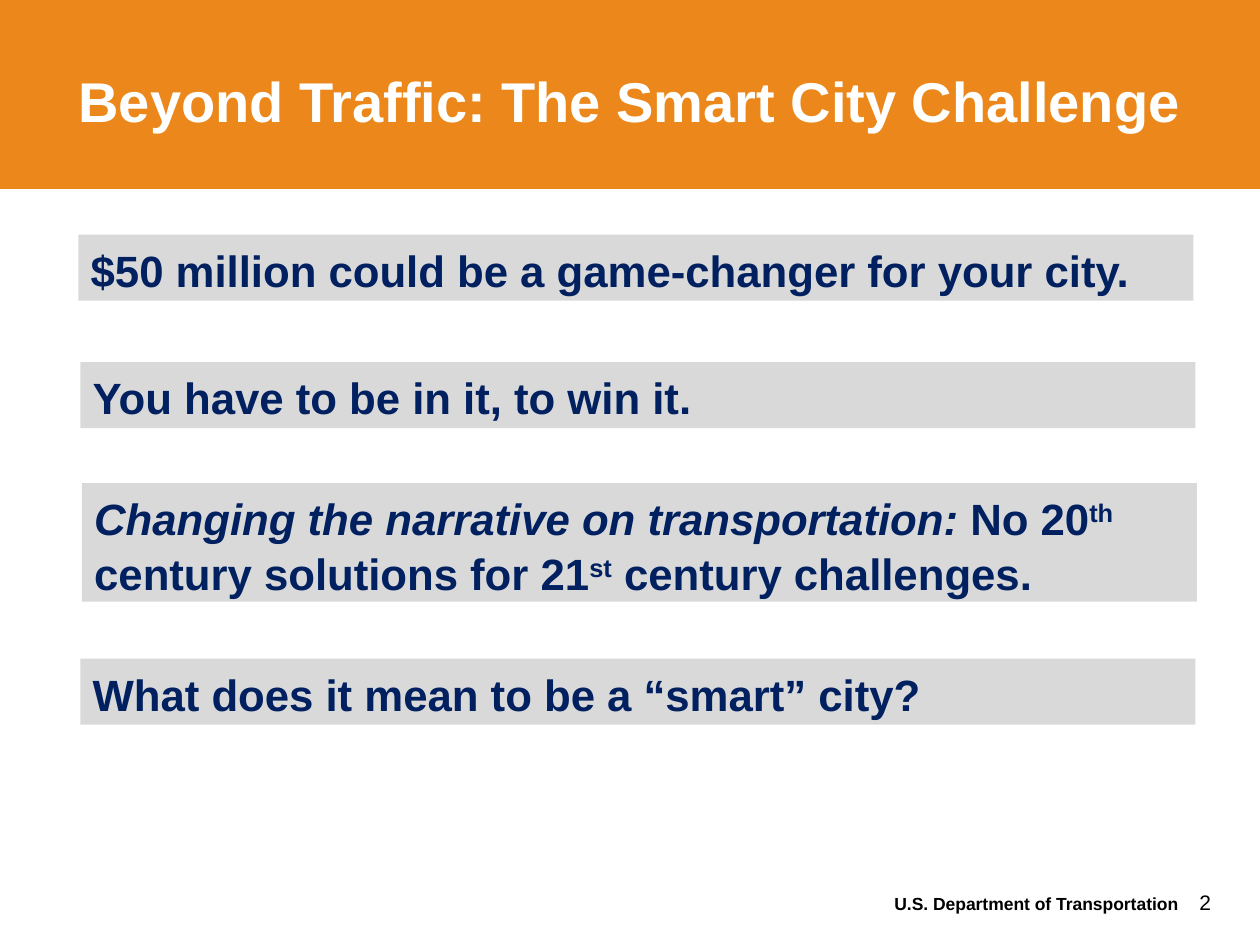
from dataclasses import dataclass

from pptx import Presentation
from pptx.dml.color import RGBColor
from pptx.enum.shapes import MSO_SHAPE
from pptx.enum.text import MSO_ANCHOR, MSO_AUTO_SIZE, PP_ALIGN
from pptx.slide import Slide
from pptx.util import Cm, Pt

RECTANGLE = MSO_SHAPE.RECTANGLE
TOP, MIDDLE = MSO_ANCHOR.TOP, MSO_ANCHOR.MIDDLE
LEFT, CENTER = PP_ALIGN.LEFT, PP_ALIGN.CENTER
NO_AUTOFIT = MSO_AUTO_SIZE.NONE
TITLE_ONLY = 5
SUPERSCRIPT = "30000"
COLORS = {
    "orange": "EC881B",
    "gray": "D9D9D9",
    "navy": "002060",
    "white": "FFFFFF",
    "black": "000000",
}


@dataclass
class SlideBuilder:
    """Draws the title band, statement bars and footer in one style."""

    slide: Slide
    font_name: str = "Arial"

    def color(self, name):
        return RGBColor.from_string(COLORS[name])

    def fill(self, shape, color):
        shape.fill.solid()
        shape.fill.fore_color.rgb = self.color(color)

    def format(self, paragraph, size, color, bold, alignment=LEFT):
        paragraph.alignment = alignment
        font = paragraph.font
        font.name, font.size, font.bold = self.font_name, Pt(size), bold
        font.color.rgb = self.color(color)

    def title(self, text, width, height):
        shape = self.slide.shapes.title
        shape.left, shape.top, shape.width, shape.height = 0, 0, Cm(width), Cm(height)
        self.fill(shape, "orange")
        frame = shape.text_frame
        frame.text = text
        frame.auto_size = NO_AUTOFIT
        frame.vertical_anchor = MIDDLE
        frame.margin_top = Cm(0.34)
        self.format(frame.paragraphs[0], 32, "white", True, CENTER)

    def bar(self, left, top, height, parts):
        shape = self.slide.shapes.add_shape(
            RECTANGLE, Cm(left), Cm(top), Cm(22.48), Cm(height))
        shape.shadow.inherit = False
        shape.line.fill.background()
        self.fill(shape, "gray")
        frame = shape.text_frame
        frame.word_wrap = True
        frame.vertical_anchor = TOP
        paragraph = frame.paragraphs[0]
        paragraph.line_spacing = 1.05
        paragraph.space_after = Pt(12)
        self.format(paragraph, 25, "navy", True)
        for text, style in parts:
            run = paragraph.add_run()
            run.text = text
            if style == "italic":
                run.font.italic = True
            elif style == "superscript":
                run._r.get_or_add_rPr().set("baseline", SUPERSCRIPT)

    def footer(self, left, top, width, height, text, size, bold, spacing=None):
        box = self.slide.shapes.add_textbox(Cm(left), Cm(top), Cm(width), Cm(height))
        frame = box.text_frame
        frame.word_wrap = True
        frame.text = text
        paragraph = frame.paragraphs[0]
        paragraph.line_spacing = spacing
        self.format(paragraph, size, "black", bold)


def main():
    presentation = Presentation()
    presentation.slide_width, presentation.slide_height = Cm(25.4), Cm(19.05)
    slide = presentation.slides.add_slide(presentation.slide_layouts[TITLE_ONLY])
    builder = SlideBuilder(slide)
    builder.title("Beyond Traffic: The Smart City Challenge", 25.4, 3.81)

    statements = [
        (1.58, 4.73, 1.33, [("$50 million could be a game-changer for your city.", "")]),
        (1.62, 7.3, 1.33, [("You have to be in it, to win it.", "")]),
        (1.65, 9.74, 2.39, [
            ("Changing the narrative on transportation: ", "italic"),
            ("No 20", ""),
            ("th", "superscript"),
            (" century solutions for 21", ""),
            ("st", "superscript"),
            (" century challenges.", ""),
        ]),
        (1.62, 13.28, 1.33, [("What does it mean to be a “smart” city?", "")]),
    ]
    for left, top, height, parts in statements:
        builder.bar(left, top, height, parts)

    builder.footer(17.78, 17.98, 7.62, 0.58,
                   "U.S. Department of Transportation", 10, True, Pt(9))
    builder.footer(23.93, 17.81, 1.47, 0.76, "2", 12, False)
    presentation.save("out.pptx")


if __name__ == "__main__":
    main()
